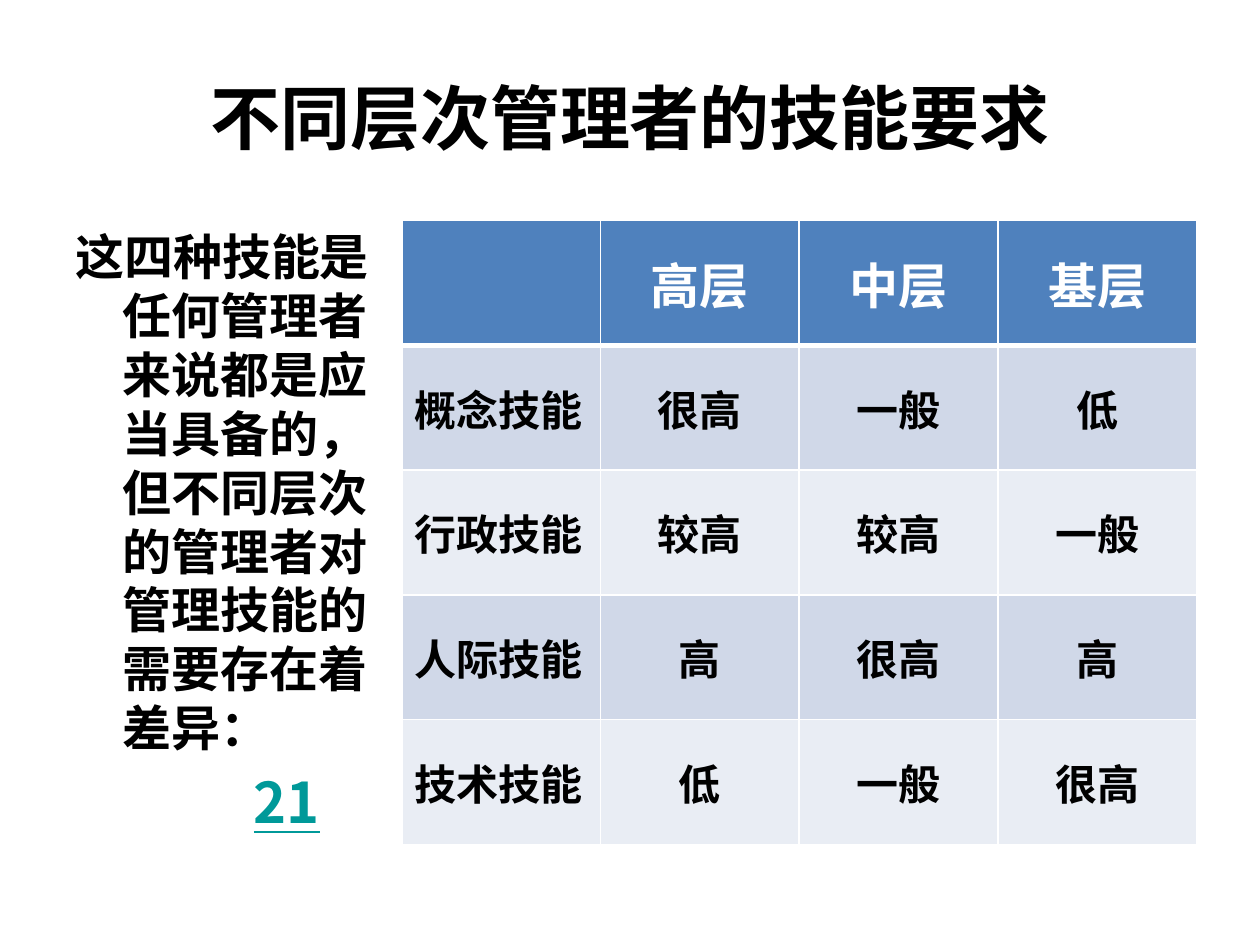
import pptx
import pptx.dml.color
import pptx.enum.text
import pptx.oxml
import pptx.oxml.ns
import pptx.util
from pptx.util import Cm, Pt

TITLE = "不同层次管理者的技能要求"
EXPLANATION = "这四种技能是任何管理者来说都是应当具备的，但不同层次的管理者对管理技能的需要存在着差异："
REFERENCE = "21"
SKILLS = [
    ["", "高层", "中层", "基层"],
    ["概念技能", "很高", "一般", "低"],
    ["行政技能", "较高", "较高", "一般"],
    ["人际技能", "高", "很高", "高"],
    ["技术技能", "低", "一般", "很高"],
]
CHINESE_FONT = "Noto Sans CJK SC"
LATIN_FONT = "Calibri"
LATIN_CELLS = {(1, 0), (1, 1), (1, 3), (2, 1), (3, 1), (4, 1), (4, 3)}
COLORS = {
    "text": "000000",
    "link": "009999",
    "header": "4F81BD",
    "odd row": "D0D8E8",
    "even row": "E9EDF4",
    "white": "FFFFFF",
}
ALIGN = pptx.enum.text.PP_ALIGN
ANCHOR = pptx.enum.text.MSO_ANCHOR


def rgb(name):
    return pptx.dml.color.RGBColor.from_string(COLORS[name])


def format_runs(paragraph, size, color="text", typeface=CHINESE_FONT):
    for run in paragraph.runs:
        run.font.size = Pt(size)
        run.font.bold = True
        run.font.name = typeface
        run.font.color.rgb = rgb(color)
        east_asian = pptx.oxml.parse_xml(
            f'<a:ea {pptx.oxml.ns.nsdecls("a")} typeface="{CHINESE_FONT}"/>')
        run.font._element.find(pptx.oxml.ns.qn("a:latin")).addnext(east_asian)


def add_text_box(slide, left, top, width, height, anchor):
    text_frame = slide.shapes.add_textbox(
        Cm(left), Cm(top), Cm(width), Cm(height)).text_frame
    text_frame.word_wrap = True
    text_frame.vertical_anchor = anchor
    return text_frame


def set_borders(cell, widths):
    """Draw white borders; widths gives points for left, right, top and bottom."""
    properties = cell._tc.get_or_add_tcPr()
    for position, (side, width) in enumerate(zip("LRTB", widths)):
        properties.insert(position, pptx.oxml.parse_xml(
            f'<a:ln{side} {pptx.oxml.ns.nsdecls("a")} w="{Pt(width)}">'
            f'<a:solidFill><a:srgbClr val="{COLORS["white"]}"/></a:solidFill>'
            f'</a:ln{side}>'))


def add_title(slide):
    text_frame = add_text_box(slide, 1.27, 0.76, 22.86, 3.18, ANCHOR.MIDDLE)
    text_frame.text = TITLE
    paragraph = text_frame.paragraphs[0]
    paragraph.alignment = ALIGN.CENTER
    format_runs(paragraph, 40)


def add_explanation(slide):
    text_frame = add_text_box(slide, 1.27, 4.45, 6.83, 12.57, ANCHOR.TOP)
    text_frame.text = EXPLANATION
    explanation = text_frame.paragraphs[0]
    indents = explanation._p.get_or_add_pPr()
    indents.set("marL", str(Cm(0.95)))
    indents.set("indent", str(Cm(-0.95)))
    format_runs(explanation, 28)

    reference = text_frame.add_paragraph()
    reference.text = REFERENCE
    reference._p.get_or_add_pPr().set("marL", str(Cm(3.6)))
    reference.space_before = Pt(6.4)
    format_runs(reference, 32, "link")
    reference.runs[0].font.underline = True


def add_skill_table(slide):
    table = slide.shapes.add_table(
        len(SKILLS), len(SKILLS[0]), Cm(8.1), Cm(4.45), Cm(16.02), Cm(12.57)).table
    for row, texts in enumerate(SKILLS):
        is_header = row == 0
        fill = "header" if is_header else "odd row" if row % 2 else "even row"
        for column, text in enumerate(texts):
            cell = table.cell(row, column)
            cell.fill.solid()
            cell.fill.fore_color.rgb = rgb(fill)
            set_borders(cell, (1, 1, 3 if row == 1 else 1, 3 if is_header else 1))
            cell.vertical_anchor = ANCHOR.MIDDLE
            cell.text_frame.text = text
            paragraph = cell.text_frame.paragraphs[0]
            paragraph.alignment = ALIGN.CENTER if column else ALIGN.LEFT
            format_runs(
                paragraph,
                28 if is_header else 24,
                "white" if is_header else "text",
                LATIN_FONT if (row, column) in LATIN_CELLS else CHINESE_FONT)


def main():
    presentation = pptx.Presentation()
    presentation.slide_width = Cm(25.4)
    presentation.slide_height = Cm(19.05)
    slide = presentation.slides.add_slide(presentation.slide_layouts[6])
    add_title(slide)
    add_explanation(slide)
    add_skill_table(slide)
    presentation.save("out.pptx")


if __name__ == "__main__":
    main()
